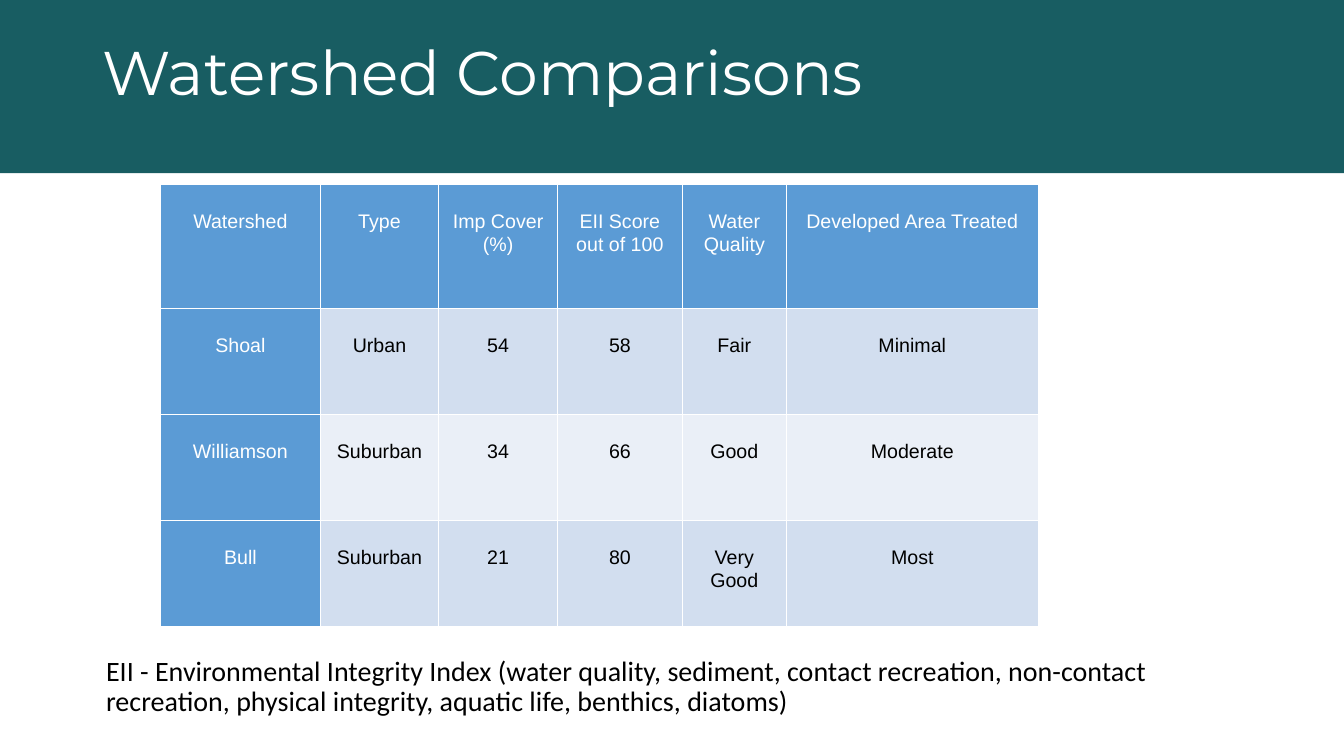
from dataclasses import dataclass

from lxml.etree import SubElement
from pptx import Presentation
from pptx.dml.color import RGBColor
from pptx.enum.shapes import MSO_SHAPE
from pptx.enum.text import MSO_ANCHOR, PP_ALIGN
from pptx.oxml.ns import qn
from pptx.slide import Slide
from pptx.table import _Cell
from pptx.text.text import _Paragraph
from pptx.util import Emu, Pt


@dataclass(frozen=True)
class TextStyle:
    font: str
    size: int
    color: str
    line_spacing: float


@dataclass(frozen=True)
class Theme:
    band: str = "185D62"
    header: str = "5B9BD5"
    stripes: tuple[str, str] = ("D2DEEF", "EAEFF7")
    border: str = "FFFFFF"
    border_pt: int = 1
    title: TextStyle = TextStyle("Montserrat", 44, "FFFFFF", 0.9)
    note: TextStyle = TextStyle("Calibri", 20, "000000", 0.9)
    heading: TextStyle = TextStyle("Arial", 14, "FFFFFF", 1.07)
    value: TextStyle = TextStyle("Arial", 14, "000000", 1.07)


@dataclass(frozen=True)
class Box:
    left: int
    top: int
    width: int
    height: int

    def emu(self) -> tuple[Emu, Emu, Emu, Emu]:
        return px(self.left), px(self.top), px(self.width), px(self.height)


@dataclass(frozen=True)
class TextBlock:
    box: Box
    text: str
    style: TextStyle
    anchor: MSO_ANCHOR


THEME = Theme()
SLIDE_W, SLIDE_H = 1280, 720
BAND = Box(0, 0, SLIDE_W, 165)
TEXT_INSET = 10

TEXT_BLOCKS = [
    TextBlock(Box(88, 48, 1104, 66), "Watershed Comparisons", THEME.title, MSO_ANCHOR.BOTTOM),
    TextBlock(
        Box(91, 616, 1101, 91),
        "EII - Environmental Integrity Index (water quality, sediment, contact recreation, "
        "non-contact recreation, physical integrity, aquatic life, benthics, diatoms)",
        THEME.note,
        MSO_ANCHOR.TOP,
    ),
]

TABLE_LEFT, TABLE_TOP = 153, 176
COLUMN_WIDTHS = [152, 113, 113, 119, 99, 240]
ROW_HEIGHTS = [118, 101, 101, 101]
CELL_SIDE, CELL_TOP = 7, 23
ROWS = [
    ["Watershed", "Type", "Imp Cover (%)", "EII Score\nout of 100", "Water Quality",
     "Developed Area Treated"],
    ["Shoal", "Urban", "54", "58", "Fair", "Minimal"],
    ["Williamson", "Suburban", "34", "66", "Good", "Moderate"],
    ["Bull", "Suburban", "21", "80", "Very Good", "Most"],
]


def px(n: int) -> Emu:
    return Emu(n * 9525)


def add_run(p: _Paragraph, text: str, style: TextStyle) -> None:
    p.line_spacing = style.line_spacing
    r = p.add_run()
    r.text = text
    r.font.name = style.font
    r.font.size = Pt(style.size)
    r.font.color.rgb = RGBColor.from_string(style.color)


def add_band(s: Slide) -> None:
    sp = s.shapes.add_shape(MSO_SHAPE.RECTANGLE, *BAND.emu())
    sp.shadow.inherit = False
    sp.fill.solid()
    sp.fill.fore_color.rgb = RGBColor.from_string(THEME.band)
    sp.line.fill.background()


def add_text(s: Slide, block: TextBlock) -> None:
    tf = s.shapes.add_textbox(*block.box.emu()).text_frame
    tf.word_wrap = True
    tf.vertical_anchor = block.anchor
    tf.margin_left = tf.margin_right = tf.margin_top = tf.margin_bottom = px(TEXT_INSET)
    add_run(tf.paragraphs[0], block.text, block.style)


def set_borders(cell: _Cell) -> None:
    tc_pr = cell._tc.get_or_add_tcPr()
    for side in ("lnL", "lnR", "lnT", "lnB"):
        ln = SubElement(tc_pr, qn(f"a:{side}"), w=str(Pt(THEME.border_pt)))
        fill = SubElement(ln, qn("a:solidFill"))
        SubElement(fill, qn("a:srgbClr"), val=THEME.border)


def fill_cell(cell: _Cell, text: str, style: TextStyle, color: str) -> None:
    """Write one paragraph per line of text, then set the cell's borders and fill."""
    cell.margin_left = cell.margin_right = px(CELL_SIDE)
    cell.margin_top, cell.margin_bottom = px(CELL_TOP), 0
    cell.vertical_anchor = MSO_ANCHOR.TOP
    tf = cell.text_frame
    for i, line in enumerate(text.split("\n")):
        p = tf.add_paragraph() if i else tf.paragraphs[0]
        p.alignment = PP_ALIGN.CENTER
        add_run(p, line, style)
    set_borders(cell)
    cell.fill.solid()
    cell.fill.fore_color.rgb = RGBColor.from_string(color)


def add_watershed_table(s: Slide) -> None:
    box = Box(TABLE_LEFT, TABLE_TOP, sum(COLUMN_WIDTHS), sum(ROW_HEIGHTS))
    table = s.shapes.add_table(len(ROWS), len(COLUMN_WIDTHS), *box.emu()).table
    table.first_col = True
    for column, width in zip(table.columns, COLUMN_WIDTHS):
        column.width = px(width)
    for row, height in zip(table.rows, ROW_HEIGHTS):
        row.height = px(height)
    for i, texts in enumerate(ROWS):
        for j, text in enumerate(texts):
            if i == 0 or j == 0:
                style, color = THEME.heading, THEME.header
            else:
                style, color = THEME.value, THEME.stripes[(i - 1) % 2]
            fill_cell(table.cell(i, j), text, style, color)


def main() -> None:
    prs = Presentation()
    prs.slide_width, prs.slide_height = px(SLIDE_W), px(SLIDE_H)
    s = prs.slides.add_slide(prs.slide_layouts[6])
    add_band(s)
    for block in TEXT_BLOCKS:
        add_text(s, block)
    add_watershed_table(s)
    prs.save("out.pptx")


if __name__ == "__main__":
    main()
